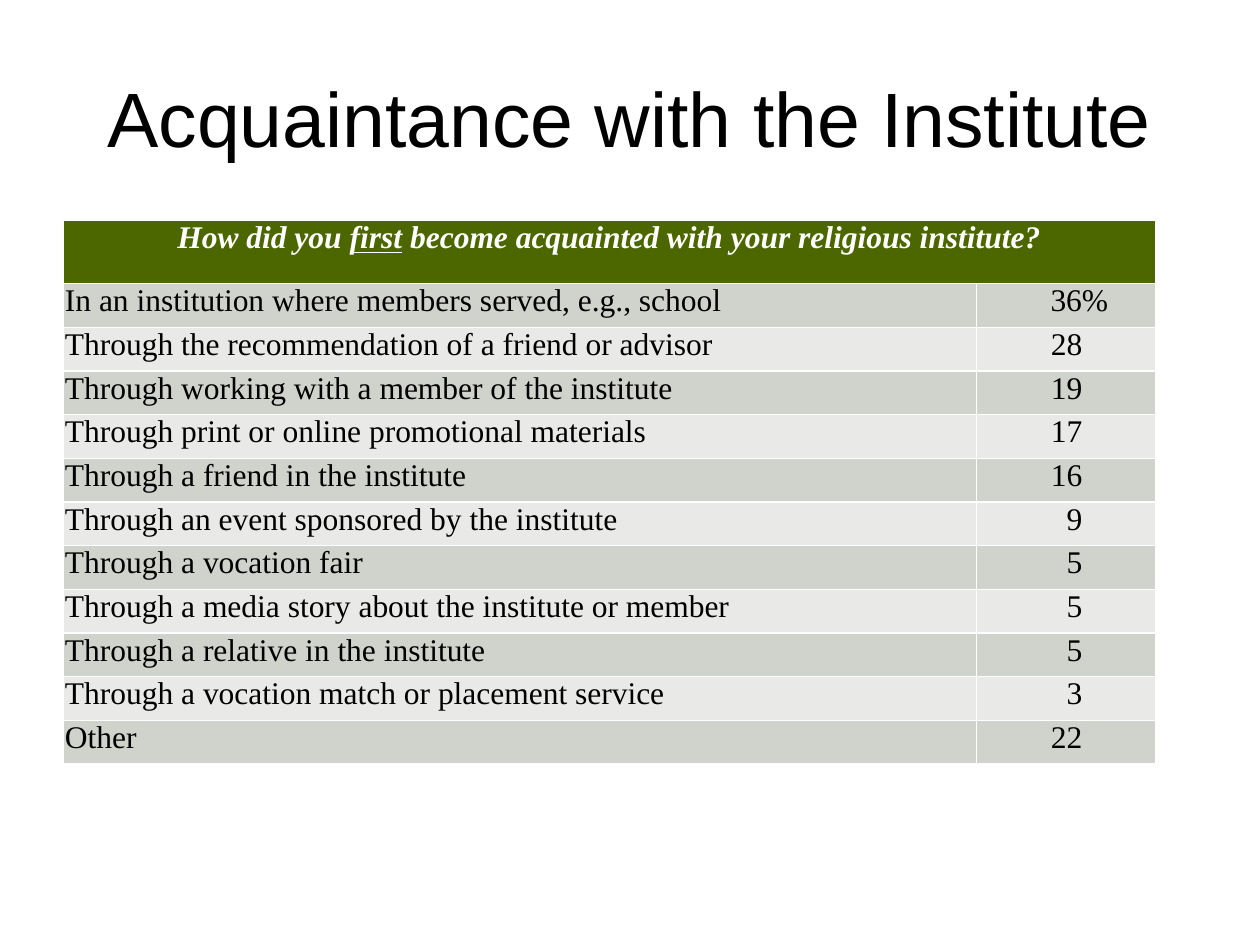
from pptx import Presentation
from pptx.dml.color import RGBColor
from pptx.enum import text
from pptx.util import Cm, Pt

BLACK = RGBColor(0x00, 0x00, 0x00)
WHITE = RGBColor(0xFF, 0xFF, 0xFF)
GREEN = RGBColor(0x4C, 0x66, 0x00)
BANDS = [RGBColor(0xD0, 0xD3, 0xCC), RGBColor(0xE9, 0xEA, 0xE7)]

ANSWERS = [
    ("In an institution where members served, e.g., school", "36%"),
    ("Through the recommendation of a friend or advisor", "28"),
    ("Through working with a member of the institute", "19"),
    ("Through print or online promotional materials", "17"),
    ("Through a friend in the institute", "16"),
    ("Through an event sponsored by the institute", "9"),
    ("Through a vocation fair", "5"),
    ("Through a media story about the institute or member", "5"),
    ("Through a relative in the institute", "5"),
    ("Through a vocation match or placement service", "3"),
    ("Other", "22"),
]


def style(cell, fill, color, align, bold=False):
    cell.fill.solid()
    cell.fill.fore_color.rgb = fill
    cell.margin_left = cell.margin_right = Cm(0.04)
    cell.margin_top = cell.margin_bottom = 0
    line = cell.text_frame.paragraphs[0]
    line.alignment = align
    for run in line.runs:
        run.font.name = "Times New Roman"
        run.font.size = Pt(18)
        run.font.bold = run.font.italic = bold
        run.font.color.rgb = color


deck = Presentation()
deck.slide_width, deck.slide_height = Cm(25.4), Cm(19.05)
slide = deck.slides.add_slide(deck.slide_layouts[5])

# Title
title = slide.shapes.title
title.left, title.top = Cm(1.27), Cm(0.76)
title.width, title.height = Cm(22.86), Cm(3.18)
title.text_frame.text = "Acquaintance with the Institute"
title.text_frame.vertical_anchor = text.MSO_ANCHOR.MIDDLE
head = title.text_frame.paragraphs[0]
head.alignment = text.PP_ALIGN.CENTER
font = head.runs[0].font
font.name, font.size, font.color.rgb = "Arial", Pt(44), BLACK

# Table grid
widths = [Cm(18.42), Cm(3.6)]
top_row, row = Cm(1.27), Cm(0.88)
count = len(ANSWERS)
table = slide.shapes.add_table(count + 1, 2, Cm(1.27), Cm(4.45),
                               sum(widths), top_row + count * row).table
for column, width in zip(table.columns, widths):
    column.width = width
for line in table.rows:
    line.height = row
table.rows[0].height = top_row

# Question across both columns
ask = table.cell(0, 0)
ask.merge(table.cell(0, 1))
for part in ("How did you ", "first",
             " become acquainted with your religious institute?"):
    run = ask.text_frame.paragraphs[0].add_run()
    run.text = part
    run.font.underline = part == "first"
style(ask, GREEN, WHITE, text.PP_ALIGN.CENTER, bold=True)

# Answers, with the digits lined up and the percent sign hanging past them
for i, (answer, share) in enumerate(ANSWERS):
    label, value = table.cell(i + 1, 0), table.cell(i + 1, 1)
    label.text_frame.text = answer
    value.text_frame.text = share
    style(label, BANDS[i % 2], BLACK, text.PP_ALIGN.LEFT)
    style(value, BANDS[i % 2], BLACK, text.PP_ALIGN.RIGHT)
    value.margin_right = Cm(0.95) if share.endswith("%") else Cm(1.47)

deck.save("out.pptx")
